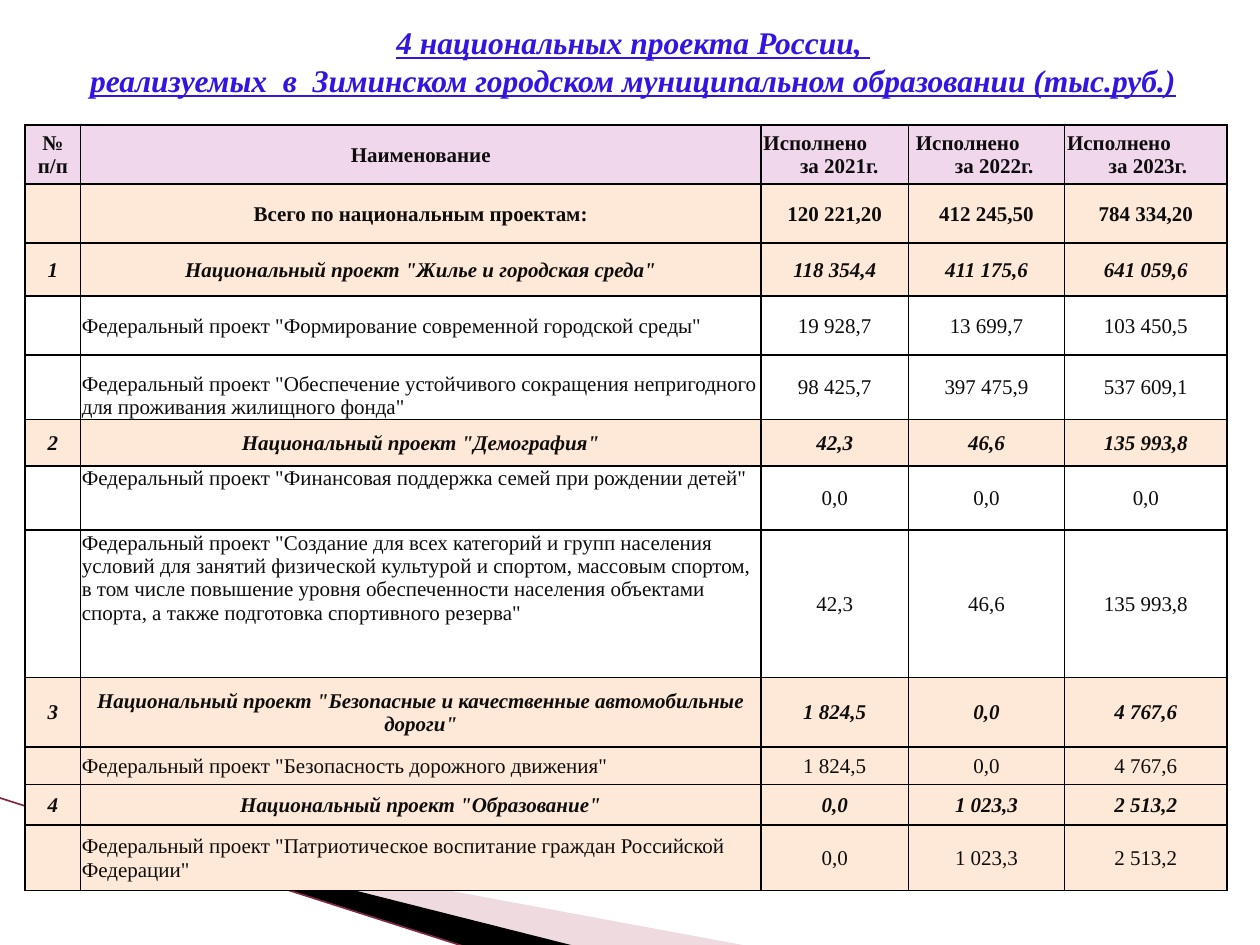
from dataclasses import dataclass

import pptx
import pptx.dml.color
import pptx.enum.shapes
import pptx.enum.text
import pptx.oxml
import pptx.oxml.ns
import pptx.util
from pptx.util import Inches

ALIGN = pptx.enum.text.PP_ALIGN
ANCHOR = pptx.enum.text.MSO_ANCHOR
FONT = "Times New Roman"
INK = "0D0D0D"
PINK = "F1D7EC"
PEACH = "FEE8D8"


@dataclass
class Band:
    points: list[tuple[float, float]]
    color: str
    opacity: int = 100


@dataclass
class Row:
    height: float
    number: str
    name: str
    values: list[str]
    fill: str | None = PEACH
    bold: bool = True
    italic: bool = True
    name_align: int = ALIGN.CENTER
    name_anchor: int = ANCHOR.MIDDLE


def rgb(color: str) -> pptx.dml.color.RGBColor:
    return pptx.dml.color.RGBColor.from_string(color)


def set_format(font, color: str, **values) -> None:
    for name, value in values.items():
        setattr(font, name, value)
    font.color.rgb = rgb(color)


def project(height: float, number: str, name: str, *values: str) -> Row:
    return Row(height, number, f'Национальный проект "{name}"', list(values))


def subproject(height: float, name: str, *values: str, fill: str | None = None,
               anchor: int = ANCHOR.MIDDLE) -> Row:
    return Row(height, "", f'Федеральный проект "{name}"', list(values), fill,
               False, False, ALIGN.LEFT, anchor)


def add_band(s, band: Band) -> None:
    points = [(Inches(x), Inches(y)) for x, y in band.points]
    fb = s.shapes.build_freeform(*points[0])
    fb.add_line_segments(points[1:], close=True)
    sp = fb.convert_to_shape()
    sp.shadow.inherit = False
    sp.line.fill.background()
    sp.fill.solid()
    sp.fill.fore_color.rgb = rgb(band.color)
    if band.opacity < 100:
        clr = sp.fill._xPr.find(".//" + pptx.oxml.ns.qn("a:srgbClr"))
        clr.append(pptx.oxml.parse_xml(
            f'<a:alpha {pptx.oxml.ns.nsdecls("a")} val="{band.opacity * 1000}"/>'))


def add_edge(s, start: tuple[float, float], end: tuple[float, float], color: str) -> None:
    cx = s.shapes.add_connector(pptx.enum.shapes.MSO_CONNECTOR.STRAIGHT,
                                *map(Inches, start + end))
    cx.line.color.rgb = rgb(color)
    cx.line.width = pptx.util.Pt(0.95)
    cx._element.spPr.append(
        pptx.oxml.parse_xml(f'<a:effectLst {pptx.oxml.ns.nsdecls("a")}/>'))


def add_title(s, lines: list[str]) -> None:
    sp = s.shapes.title
    s.shapes._spTree.append(sp._element)
    place = dict(left=0.46, top=0.13, width=9.13, height=0.71)
    for name, value in place.items():
        setattr(sp, name, Inches(value))
    tf = sp.text_frame
    tf.auto_size = pptx.enum.text.MSO_AUTO_SIZE.NONE
    tf.vertical_anchor = ANCHOR.MIDDLE
    tf.text = "\n".join(lines)
    for p in tf.paragraphs:
        p.alignment = ALIGN.CENTER
        set_format(p.runs[0].font, "3215E1", name=FONT, size=pptx.util.Pt(18),
                   bold=True, italic=True, underline=True)


def add_borders(cell) -> None:
    tcPr = cell._tc.get_or_add_tcPr()
    for i, side in enumerate(("lnL", "lnR", "lnT", "lnB")):
        tcPr.insert(i, pptx.oxml.parse_xml(
            f'<a:{side} {pptx.oxml.ns.nsdecls("a")} w="12700"><a:solidFill>'
            f'<a:srgbClr val="000000"/></a:solidFill></a:{side}>'))


def fill_cell(cell, text: str, row: Row, align: int, anchor: int) -> None:
    margins = dict(margin_left=0.01, margin_right=0.01, margin_top=0.01, margin_bottom=0)
    for name, value in margins.items():
        setattr(cell, name, Inches(value))
    cell.vertical_anchor = anchor
    if row.fill:
        cell.fill.solid()
        cell.fill.fore_color.rgb = rgb(row.fill)
    else:
        cell.fill.background()
    add_borders(cell)
    p = cell.text_frame.paragraphs[0]
    p.text = text
    p.alignment = align
    for r in p.runs:
        set_format(r.font, INK, name=FONT, size=pptx.util.Pt(12),
                   bold=row.bold, italic=row.italic)
    if not text:
        p._p.get_or_add_endParaRPr().set("sz", "1200")


def hang_second_line(cell, first: float, second: float) -> None:
    p = cell.text_frame.paragraphs[0]
    p.alignment = ALIGN.LEFT
    pPr = p._p.get_or_add_pPr()
    pPr.set("marL", str(Inches(second)))
    pPr.set("indent", str(Inches(first - second)))


def add_budget_table(s, rows: list[Row], widths: list[float]) -> None:
    frame = s.shapes.add_table(len(rows), len(widths), Inches(0.2), Inches(0.99),
                               Inches(sum(widths)), Inches(sum(r.height for r in rows)))
    table = frame.table
    table.first_row = table.horz_banding = False
    for column, width in zip(table.columns, widths):
        column.width = Inches(width)
    for i, row in enumerate(rows):
        table.rows[i].height = Inches(row.height)
        for j, text in enumerate([row.number, row.name, *row.values]):
            is_name = j == 1
            fill_cell(table.cell(i, j), text, row,
                      row.name_align if is_name else ALIGN.CENTER,
                      row.name_anchor if is_name else ANCHOR.MIDDLE)
    for j, (first, second) in enumerate([(0.01, 0.3), (0.05, 0.36), (0.01, 0.34)], 2):
        hang_second_line(table.cell(0, j), first, second)


BANDS = [
    Band([(0.55, 6.51), (5.95, 7.51), (4.56, 7.51), (0.55, 6.5)], "D8A3AF", 40),
    Band([(0.53, 6.49), (4.57, 7.51), (3.72, 7.52), (0.54, 6.5)], "000000"),
]
TITLE = ["4 национальных проекта России, ",
         "реализуемых  в  Зиминском городском муниципальном образовании (тыс.руб.)"]
WIDTHS = [0.44, 5.4, 1.17, 1.24, 1.29]
ROWS = [
    Row(0.47, "№ п/п", "Наименование",
        [f"Исполнено\vза {year}г." for year in (2021, 2022, 2023)], PINK, italic=False),
    Row(0.47, "", "Всего по национальным проектам:",
        ["120 221,20", "412 245,50", "784 334,20"], italic=False),
    project(0.42, "1", "Жилье и городская среда", "118 354,4", "411 175,6", "641 059,6"),
    subproject(0.47, "Формирование современной городской среды",
               "19 928,7", "13 699,7", "103 450,5"),
    subproject(0.51, "Обеспечение устойчивого сокращения непригодного для проживания "
               "жилищного фонда", "98 425,7", "397 475,9", "537 609,1",
               anchor=ANCHOR.BOTTOM),
    project(0.37, "2", "Демография", "42,3", "46,6", "135 993,8"),
    subproject(0.51, "Финансовая поддержка семей при рождении детей",
               "0,0", "0,0", "0,0", anchor=ANCHOR.TOP),
    subproject(1.17, "Создание для всех категорий и групп населения условий для занятий "
               "физической культурой и спортом, массовым спортом, в том числе повышение "
               "уровня обеспеченности населения объектами спорта, а также подготовка "
               "спортивного резерва", "42,3", "46,6", "135 993,8", anchor=ANCHOR.TOP),
    project(0.55, "3", "Безопасные и качественные автомобильные дороги",
            "1 824,5", "0,0", "4 767,6"),
    subproject(0.3, "Безопасность дорожного движения",
               "1 824,5", "0,0", "4 767,6", fill=PEACH),
    project(0.32, "4", "Образование", "0,0", "1 023,3", "2 513,2"),
    subproject(0.52, "Патриотическое воспитание граждан Российской Федерации",
               "0,0", "1 023,3", "2 513,2", fill=PEACH),
]


def main() -> None:
    prs = pptx.Presentation()
    prs.slide_width, prs.slide_height = Inches(10), Inches(7.5)
    s = prs.slides.add_slide(prs.slide_layouts[5])
    for band in BANDS:
        add_band(s, band)
    add_edge(s, (-0.01, 6.33), (3.71, 7.52), "7F2A43")
    add_title(s, TITLE)
    add_budget_table(s, ROWS, WIDTHS)
    prs.save("out.pptx")


if __name__ == "__main__":
    main()
